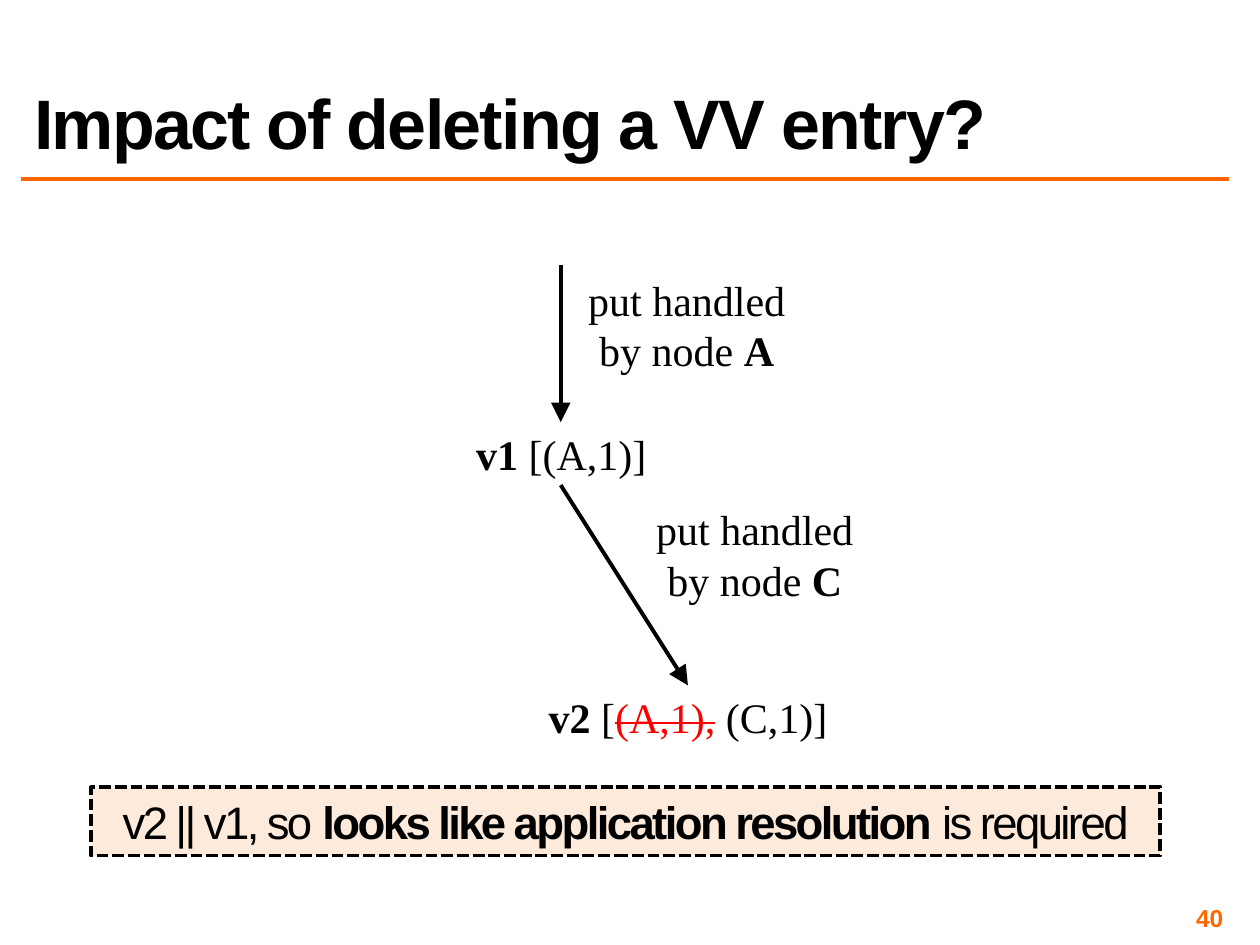
from dataclasses import dataclass

from lxml.etree import SubElement
from pptx import Presentation
from pptx.dml.color import RGBColor
from pptx.enum.dml import MSO_LINE
from pptx.enum.shapes import MSO_CONNECTOR, MSO_SHAPE
from pptx.enum.text import MSO_ANCHOR, PP_ALIGN
from pptx.oxml.ns import qn
from pptx.util import Inches, Pt

COLORS = {"black": "000000", "orange": "FF6600", "red": "FF0000", "peach": "FDEADA"}


@dataclass
class Run:
    text: str
    bold: bool = False
    color: str = "black"
    strike: bool = False


@dataclass
class Label:
    box: tuple[float, float, float, float]
    runs: list[Run]


@dataclass
class Line:
    start: tuple[float, float]
    end: tuple[float, float]
    color: str = "black"
    width: float = 2.25
    arrow: bool = True


LINES = [
    Line((0.17, 1.42), (9.75, 1.42), "orange", 2, False),
    Line((4.45, 2.1), (4.45, 3.35)),
    Line((4.45, 3.85), (5.46, 5.44)),
]
LABELS = [
    Label((4.46, 2.13, 1.98, 0.91), [Run("put handled by node "), Run("A", True)]),
    Label((3.58, 3.35, 1.75, 0.5), [Run("v1", True), Run(" [(A,1)]")]),
    Label((5, 3.95, 1.98, 0.91), [Run("put handled by node "), Run("C", True)]),
    Label((3.94, 5.44, 3.04, 0.5), [
        Run("v2", True), Run(" ["), Run("(A,1),", color="red", strike=True), Run(" (C,1)]"),
    ]),
]
CONCLUSION = [
    Run("v2 || v1, so "),
    Run("looks like application resolution ", True),
    Run("is required"),
]


def rgb(name: str) -> RGBColor:
    return RGBColor.from_string(COLORS[name])


def write(sp, runs: list[Run], *, font="Times New Roman", size=24, align=PP_ALIGN.CENTER,
          anchor=MSO_ANCHOR.TOP, spacing=0.0, line_spacing=None, margin=None) -> None:
    tf = sp.text_frame
    tf.word_wrap = True
    tf.vertical_anchor = anchor
    if margin is not None:
        tf.margin_left = tf.margin_right = tf.margin_top = tf.margin_bottom = Inches(margin)
    p = tf.paragraphs[0]
    p.alignment = align
    if line_spacing:
        p.line_spacing = line_spacing
    for run in runs:
        r = p.add_run()
        r.text = run.text
        r.font.name, r.font.size, r.font.bold = font, Pt(size), run.bold
        r.font.color.rgb = rgb(run.color)
        rPr = r.font._element
        if spacing:
            rPr.set("spc", str(round(spacing * 100)))
        if run.strike:
            rPr.set("strike", "sngStrike")


def draw_line(s, line: Line) -> None:
    points = (Inches(v) for v in line.start + line.end)
    sp = s.shapes.add_connector(MSO_CONNECTOR.STRAIGHT, *points)
    sp.line.color.rgb = rgb(line.color)
    sp.line.width = Pt(line.width)
    if line.arrow:
        ln = sp.line._get_or_add_ln()
        SubElement(ln, qn("a:tailEnd"), type="triangle", w="lg", len="lg")
    SubElement(sp._element.spPr, qn("a:effectLst"))


def add_text(s, box: tuple[float, float, float, float], runs: list[Run], **fmt) -> None:
    write(s.shapes.add_textbox(*map(Inches, box)), runs, **fmt)


def add_conclusion(s) -> None:
    sp = s.shapes.add_shape(MSO_SHAPE.RECTANGLE, *map(Inches, (0.72, 6.25, 8.49, 0.54)))
    sp.shadow.inherit = False
    sp.fill.solid()
    sp.fill.fore_color.rgb = rgb("peach")
    sp.line.color.rgb = rgb("black")
    sp.line.width = Pt(2.25)
    sp.line.dash_style = MSO_LINE.SQUARE_DOT
    write(sp, CONCLUSION, font="Arial", size=26, spacing=-1.5)


def main() -> None:
    """Build the slide and save it."""
    prs = Presentation()
    prs.slide_width, prs.slide_height = Inches(10), Inches(7.5)
    s = prs.slides.add_slide(prs.slide_layouts[5])
    title = s.shapes.title
    title.left, title.top, title.width, title.height = map(Inches, (0.17, 0.17, 9.58, 1.17))
    write(title, [Run("Impact of deleting a VV entry?", True)], font="Arial", size=40,
          align=PP_ALIGN.LEFT, anchor=MSO_ANCHOR.BOTTOM, spacing=-1, line_spacing=0.8)
    for line in LINES:
        draw_line(s, line)
    for label in LABELS:
        add_text(s, label.box, label.runs)
    add_conclusion(s)
    add_text(s, (7.42, 7.17, 2.33, 0.23), [Run("40", True, "orange")], font="Arial", size=14,
             align=PP_ALIGN.RIGHT, anchor=MSO_ANCHOR.MIDDLE, margin=0.04)
    prs.save("out.pptx")


if __name__ == "__main__":
    main()
